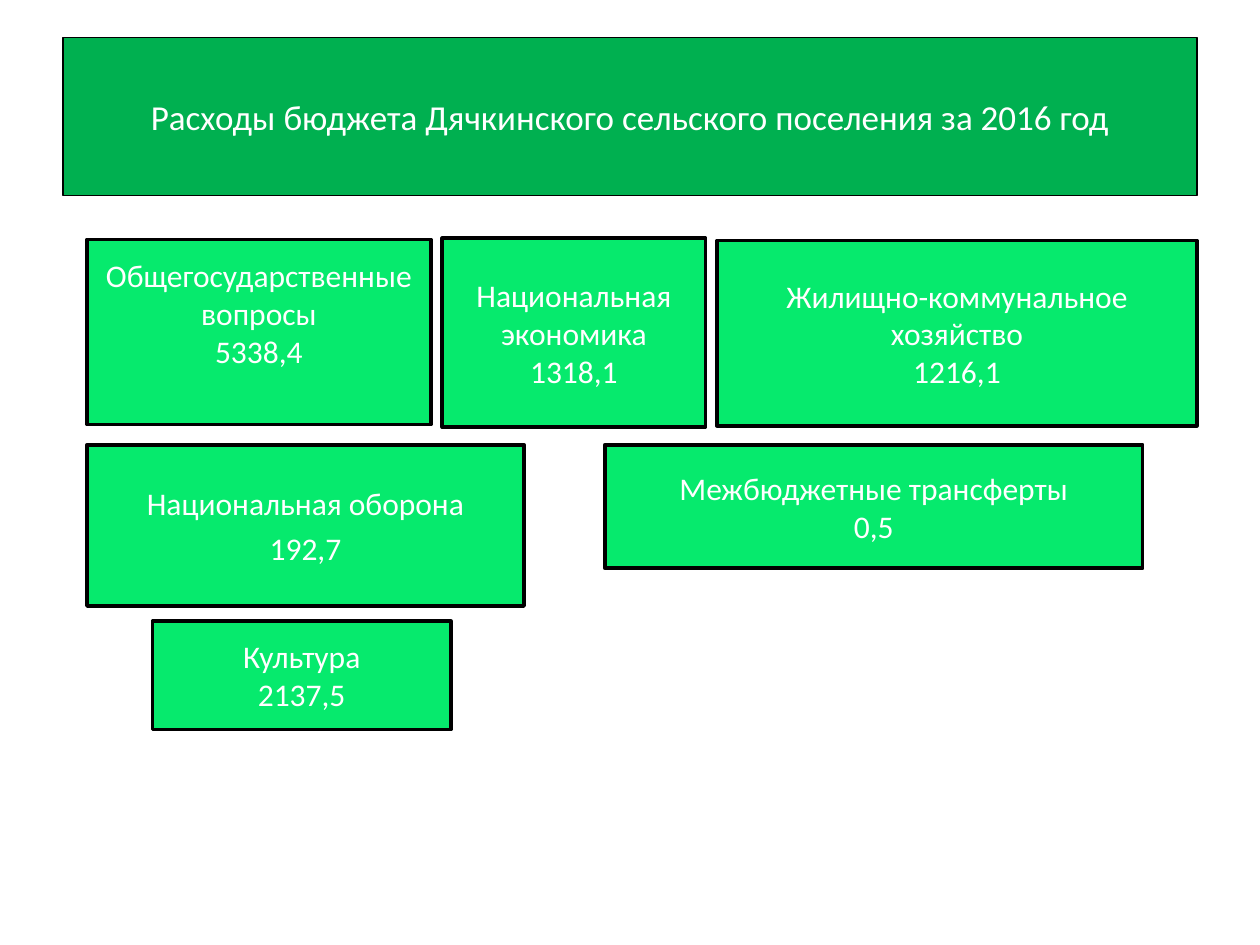
from pptx import Presentation
from pptx.dml.color import RGBColor
from pptx.enum.shapes import MSO_SHAPE
from pptx.enum.text import MSO_ANCHOR, PP_ALIGN
from pptx.util import Inches, Pt

RECTANGLE = MSO_SHAPE.RECTANGLE
MIDDLE = MSO_ANCHOR.MIDDLE
CENTER = PP_ALIGN.CENTER


def color(hex_string):
    return RGBColor.from_string(hex_string)


def style_box(shape, lines, fill, line_width, font_size):
    shape.fill.solid()
    shape.fill.fore_color.rgb = color(fill)
    shape.line.color.rgb = color("000000")
    shape.line.width = Pt(line_width)
    text_frame = shape.text_frame
    text_frame.text = "\n".join(lines)
    text_frame.word_wrap = True
    text_frame.vertical_anchor = MIDDLE
    for paragraph in text_frame.paragraphs:
        paragraph.alignment = CENTER
        for run in paragraph.runs:
            run.font.name = "Calibri"
            run.font.size = Pt(font_size)
            run.font.color.rgb = color("FFFFFF")


presentation = Presentation()
presentation.slide_width = Inches(10)
presentation.slide_height = Inches(7.5)
slide = presentation.slides.add_slide(presentation.slide_layouts[5])

# Title banner
title = slide.shapes.title
title.left, title.top = Inches(0.5), Inches(0.3)
title.width, title.height = Inches(9), Inches(1.25)
style_box(title, ["Расходы бюджета Дячкинского сельского поселения за 2016 год"],
          "00B050", 0.75, 20)

# Expense boxes: name, amount, left, top, width, height,
# points before each paragraph, bottom inset in inches
expenses = [
    ("Общегосударственные вопросы", "5338,4", 0.69, 1.9, 2.73, 1.47, 0, 0.35),
    ("Национальная экономика", "1318,1", 3.51, 1.89, 2.09, 1.5, 0, 0.05),
    ("Жилищно-коммунальное хозяйство", "1216,1", 5.69, 1.91, 3.81, 1.47, 0, 0.05),
    ("Культура", "2137,5", 1.21, 4.93, 2.37, 0.86, 0, 0.05),
    ("Межбюджетные трансферты", "0,5", 4.8, 3.53, 4.27, 0.98, 0, 0.05),
    ("Национальная оборона", "192,7", 0.69, 3.53, 3.47, 1.28, 4.3, 0.05),
]
for name, amount, left, top, width, height, space_before, bottom_inset in expenses:
    box = slide.shapes.add_shape(RECTANGLE, Inches(left), Inches(top),
                                 Inches(width), Inches(height))
    box.shadow.inherit = False
    style_box(box, [name, amount], "06EA6D", 2, 18)
    box.text_frame.margin_bottom = Inches(bottom_inset)
    for paragraph in box.text_frame.paragraphs:
        paragraph.space_before = Pt(space_before)

presentation.save("out.pptx")
